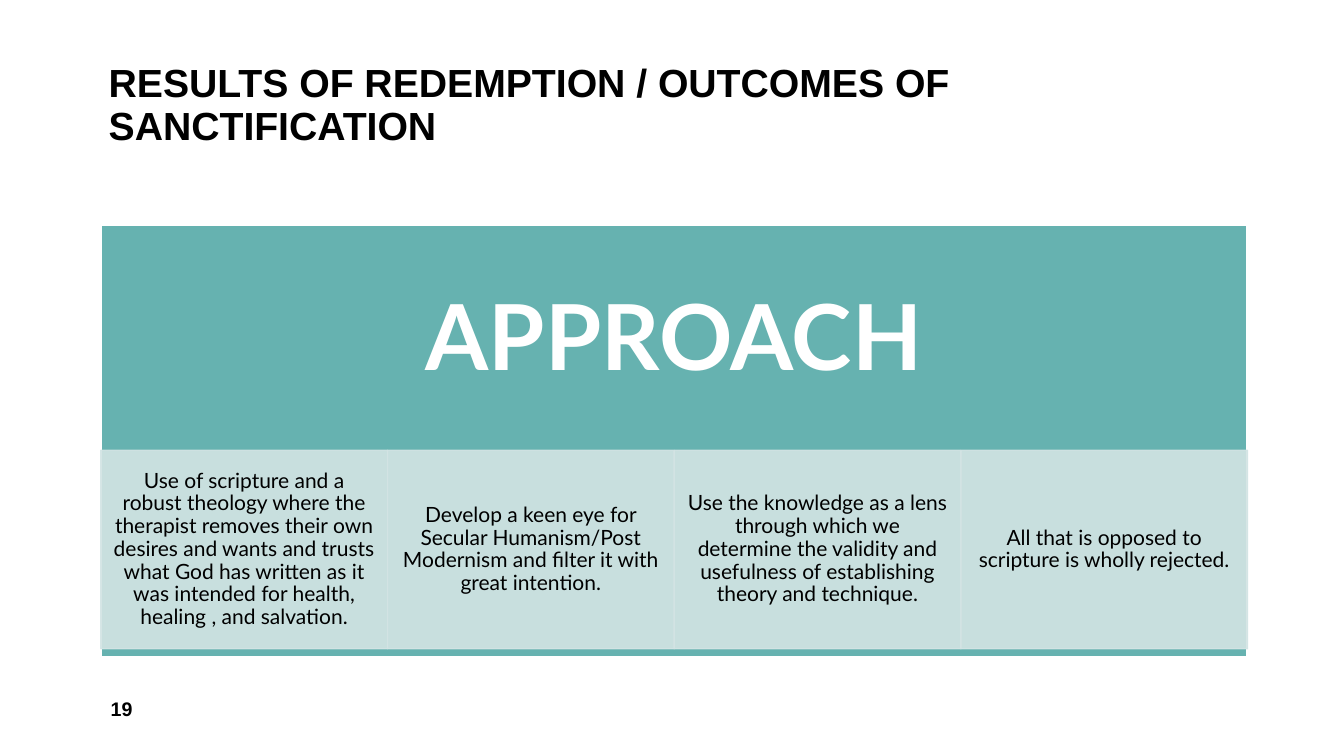
from lxml import etree
from pptx import Presentation
from pptx.dml.color import RGBColor
from pptx.enum.shapes import MSO_SHAPE
from pptx.enum.text import MSO_ANCHOR, PP_ALIGN
from pptx.oxml.ns import qn
from pptx.util import Cm, Pt

# Content
TITLE = "RESULTS OF REDEMPTION / OUTCOMES OF SANCTIFICATION"
HEADING = "APPROACH"
PAGE_NUMBER = "19"
CARDS = [
    "Use of scripture and a robust theology where the therapist removes their own "
    "desires and wants and trusts what God has written as it was intended for health, "
    "healing , and salvation.",
    "Develop a keen eye for Secular Humanism/Post Modernism and filter it with "
    "great intention.",
    "Use the knowledge as a lens through which we determine the validity and "
    "usefulness of establishing theory and technique.",
    "All that is opposed to scripture is wholly rejected.",
]

# Style
BLACK = RGBColor(0x00, 0x00, 0x00)
WHITE = RGBColor(0xFF, 0xFF, 0xFF)
TEAL = RGBColor(0x66, 0xB2, 0xB0)
PALE = RGBColor(0xD3, 0xE4, 0xE4)
RECT = MSO_SHAPE.RECTANGLE
MIDDLE, BOTTOM = MSO_ANCHOR.MIDDLE, MSO_ANCHOR.BOTTOM
LEFT, CENTER = PP_ALIGN.LEFT, PP_ALIGN.CENTER

# Layout
PANEL_X, PANEL_Y, PANEL_W, PANEL_H = Cm(2.54), Cm(5.66), Cm(28.9), Cm(10.9)
HEADING_H = Cm(5.89)
CARD_Y, CARD_H = Cm(11.35), Cm(5)
CARD_W = PANEL_W // len(CARDS)

prs = Presentation()
prs.slide_width, prs.slide_height = Cm(33.87), Cm(19.05)
s = prs.slides.add_slide(prs.slide_layouts[6])


def write(sp, text, font, size, color, bold=False, align=LEFT, anchor=MIDDLE,
          spacing=0.9, inset=(Cm(0.25), Cm(0.13))):
    tf = sp.text_frame
    tf.word_wrap = True
    tf.vertical_anchor = anchor
    tf.margin_left = tf.margin_right = inset[0]
    tf.margin_top = tf.margin_bottom = inset[1]
    p = tf.paragraphs[0]
    p.alignment, p.line_spacing = align, spacing
    r = p.add_run()
    r.text = text
    r.font.name, r.font.size, r.font.bold = font, Pt(size), bold
    r.font.color.rgb = color


def add_rect(x, y, w, h, fill, line, line_width):
    sp = s.shapes.add_shape(RECT, x, y, w, h)
    sp.shadow.inherit = False
    sp.fill.solid()
    sp.fill.fore_color.rgb = fill
    sp.line.color.rgb = line
    sp.line.width = Pt(line_width)
    return sp


def set_opacity(sp, percent):
    for color in sp.element.spPr.iter(qn("a:srgbClr")):
        etree.SubElement(color, qn("a:alpha"), val=str(percent * 1000))


# Title and page number
title = s.shapes.add_textbox(Cm(2.49), Cm(0.2), PANEL_W, Cm(3.68))
write(title, TITLE, "Arial", 28, BLACK, bold=True, anchor=BOTTOM)
number = s.shapes.add_textbox(PANEL_X, Cm(17.35), Cm(7.42), Cm(1.02))
write(number, PAGE_NUMBER, "Arial", 14, BLACK, bold=True, spacing=1.0)

# Teal panel with its heading
add_rect(PANEL_X, PANEL_Y, PANEL_W, PANEL_H, TEAL, WHITE, 1.5)
heading = s.shapes.add_textbox(PANEL_X, PANEL_Y, PANEL_W, HEADING_H)
write(heading, HEADING, "Lato", 65, WHITE, bold=True, align=CENTER,
      inset=(Cm(1.3), Cm(1.3)))

# Row of cards
for i, text in enumerate(CARDS):
    card = add_rect(PANEL_X + i * CARD_W, CARD_Y, CARD_W, CARD_H, PALE, PALE, 1)
    set_opacity(card, 90)
    write(card, text, "Lato", 15, BLACK, align=CENTER, inset=(Cm(0.3), Cm(0.05)))

prs.save("out.pptx")
